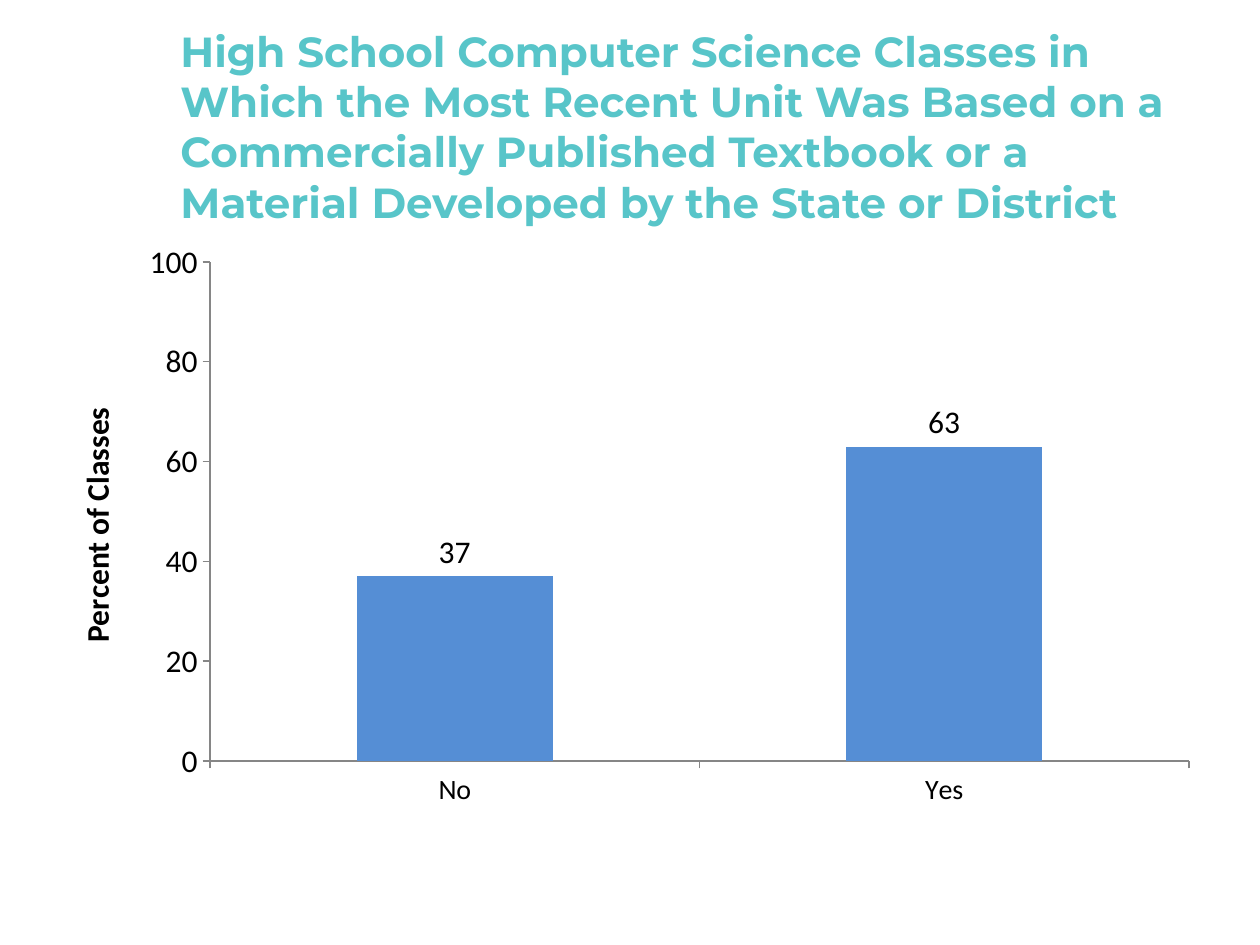
from dataclasses import dataclass

from lxml.etree import SubElement
from pptx import Presentation
from pptx.chart.data import CategoryChartData
from pptx.dml.color import RGBColor
from pptx.enum.chart import XL_CHART_TYPE, XL_LABEL_POSITION, XL_TICK_MARK
from pptx.enum.text import MSO_ANCHOR
from pptx.oxml.ns import qn
from pptx.util import Pt

PX = 914400 // 126


@dataclass(frozen=True)
class Theme:
    heading_font: str = "Montserrat"
    chart_font: str = "Calibri"
    heading: RGBColor = RGBColor(0x58, 0xC5, 0xC9)
    text: RGBColor = RGBColor(0, 0, 0)
    bar: RGBColor = RGBColor(0x55, 0x8E, 0xD5)
    axis: RGBColor = RGBColor(0x86, 0x86, 0x86)
    heading_size: int = 24
    chart_size: int = 18
    category_size: int = 16


THEME = Theme()


def emu(box):
    return [length * PX for length in box]


def set_font(font, name, size, color, bold=False):
    font.name = name
    font.size = Pt(size)
    font.color.rgb = color
    font.bold = bold


def add_heading(slide, box, wording):
    frame = slide.shapes.add_textbox(*emu(box)).text_frame
    frame.word_wrap = True
    frame.vertical_anchor = MSO_ANCHOR.TOP
    frame.margin_top = 4 * PX
    heading = frame.paragraphs[0]
    heading.text = wording
    set_font(heading.font, THEME.heading_font, THEME.heading_size, THEME.heading, bold=True)


def set_plot_area(chart, box, plot_box):
    """Fix the inner plot area, given in px relative to the chart box."""
    plot_area = chart.plots[0]._element.getparent()
    layout = plot_area.find(qn("c:layout"))
    if layout is None:
        layout = SubElement(plot_area, qn("c:layout"))
        plot_area.insert(0, layout)
    manual = SubElement(layout, qn("c:manualLayout"))
    settings = {"layoutTarget": "inner", "xMode": "edge", "yMode": "edge"}
    for key, length, whole in zip("xywh", plot_box, box[2:] * 2):
        settings[key] = f"{length / whole:.4f}"
    for key, setting in settings.items():
        SubElement(manual, qn(f"c:{key}")).set("val", setting)


def add_class_chart(slide, box, percents):
    shares = CategoryChartData()
    shares.categories = list(percents)
    shares.add_series("Series 1", list(percents.values()))
    chart = slide.shapes.add_chart(XL_CHART_TYPE.COLUMN_CLUSTERED, *emu(box), shares).chart
    set_font(chart.font, THEME.chart_font, THEME.chart_size, THEME.text)
    chart.has_legend = False
    chart.has_title = False
    set_plot_area(chart, box, (162, 31, 979, 499))

    for axis in (chart.category_axis, chart.value_axis):
        axis.has_major_gridlines = False
        axis.major_tick_mark = XL_TICK_MARK.OUTSIDE
        axis.minor_tick_mark = XL_TICK_MARK.NONE
        axis.format.line.color.rgb = THEME.axis
        axis.format.line.width = Pt(0.75)
    chart.category_axis.tick_labels.font.size = Pt(THEME.category_size)

    percent_axis = chart.value_axis
    percent_axis.minimum_scale = 0
    percent_axis.maximum_scale = 100
    percent_axis.major_unit = 20
    caption = percent_axis.axis_title.text_frame.paragraphs[0]
    caption.text = "Percent of Classes"
    set_font(caption.font, THEME.chart_font, THEME.chart_size, THEME.text, bold=True)

    bars = chart.plots[0]
    bars.gap_width = 150
    bars.vary_by_categories = False
    fill = bars.series[0].format.fill
    fill.solid()
    fill.fore_color.rgb = THEME.bar
    bars.has_data_labels = True
    bars.data_labels.show_value = True
    bars.data_labels.position = XL_LABEL_POSITION.OUTSIDE_END


def main():
    deck = Presentation()
    deck.slide_width, deck.slide_height = emu((1260, 945))
    slide = deck.slides.add_slide(deck.slide_layouts[6])
    add_class_chart(slide, (48, 231, 1166, 588), {"No": 37, "Yes": 63})
    add_heading(
        slide,
        (168, 21, 1029, 158),
        "High School Computer Science Classes in Which the Most Recent Unit Was Based on "
        "a Commercially Published Textbook or a Material Developed by the State or District",
    )
    deck.save("out.pptx")


if __name__ == "__main__":
    main()
